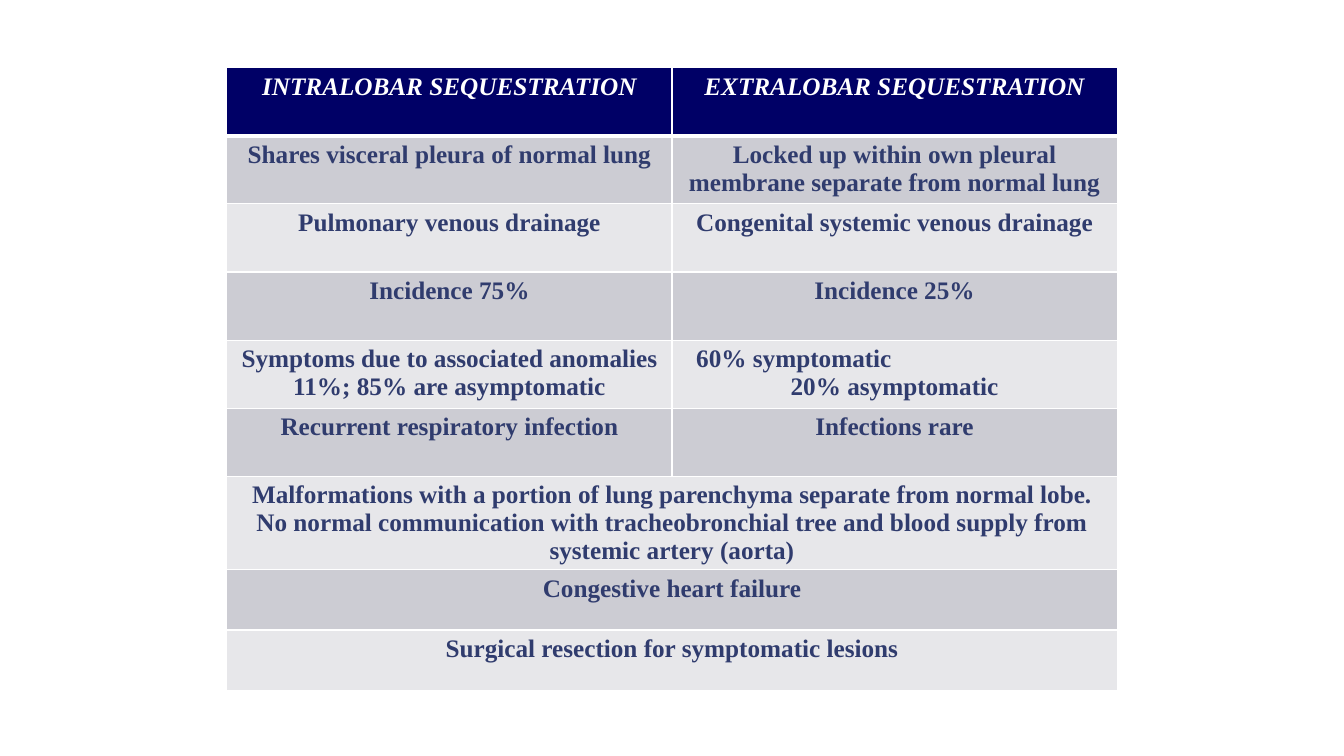
from lxml import etree
from pptx import Presentation
from pptx.dml.color import RGBColor
from pptx.enum import text
from pptx.oxml import ns
from pptx.util import Inches, Pt

COLORS = {
    "header": "000066",
    "dark_band": "CCCCD3",
    "light_band": "E7E7EA",
    "body_text": "303C6E",
    "white": "FFFFFF",
}
LEFT, WIDTH = 2.25, 8.83

# Table contents: a cell holds a list of paragraphs
comparison = [
    [["INTRALOBAR SEQUESTRATION"], ["EXTRALOBAR SEQUESTRATION"]],
    [["Shares visceral pleura of normal lung"],
     ["Locked up within own pleural membrane separate from normal lung"]],
    [["Pulmonary venous drainage"], ["Congenital systemic venous drainage"]],
    [["Incidence 75%"], ["Incidence 25%"]],
    [["Symptoms due to associated anomalies 11%; 85% are asymptomatic"],
     ["60% symptomatic", "20% asymptomatic"]],
    [["Recurrent respiratory infection"], ["Infections rare"]],
]
shared_features = [
    [[]],
    [[]],
    [["Malformations with a portion of lung parenchyma separate from normal lobe. "
      "No normal communication with tracheobronchial tree and blood supply from "
      "systemic artery (aorta)"]],
    [["Congestive heart failure"]],
    [["Surgical resection for symptomatic lesions"]],
]


def set_borders(cell, bottom_points):
    properties = cell._tc.get_or_add_tcPr()
    widths = {"lnL": 1, "lnR": 1, "lnT": 1, "lnB": bottom_points}
    for index, (side, points) in enumerate(widths.items()):
        line = etree.Element(ns.qn(f"a:{side}"), w=str(Pt(points)))
        fill = etree.SubElement(line, ns.qn("a:solidFill"))
        etree.SubElement(fill, ns.qn("a:srgbClr"), val=COLORS["white"])
        properties.insert(index, line)


def add_band_table(slide, top, row_height, rows):
    columns = len(rows[0])
    table = slide.shapes.add_table(
        len(rows), columns, Inches(LEFT), Inches(top),
        Inches(WIDTH), Inches(row_height * len(rows))).table
    for column in table.columns:
        column.width = Inches(WIDTH / columns)
    for row_index, row in enumerate(rows):
        table.rows[row_index].height = Inches(row_height)
        is_header = row_index == 0
        band = "dark_band" if row_index % 2 else "light_band"
        for column_index, lines in enumerate(row):
            cell = table.cell(row_index, column_index)
            cell.fill.solid()
            cell.fill.fore_color.rgb = RGBColor.from_string(
                COLORS["header" if is_header else band])
            set_borders(cell, 3 if is_header else 1)
            for line_index, line in enumerate(lines):
                frame = cell.text_frame
                paragraph = frame.add_paragraph() if line_index else frame.paragraphs[0]
                paragraph.alignment = text.PP_ALIGN.CENTER
                run = paragraph.add_run()
                run.text = line
                run.font.name = "Times New Roman"
                run.font.size = Pt(18)
                run.font.bold = True
                run.font.italic = is_header
                run.font.color.rgb = RGBColor.from_string(
                    COLORS["white" if is_header else "body_text"])
    return table


presentation = Presentation()
presentation.slide_width = Inches(13.33)
presentation.slide_height = Inches(7.5)
slide = presentation.slides.add_slide(presentation.slide_layouts[6])

# Features common to both types; the comparison overlaps its two top rows
add_band_table(slide, 3.52, 0.6, shared_features)

# Side-by-side comparison
comparison_table = add_band_table(slide, 0.67, 4.06 / len(comparison), comparison)

# The symptomatic share starts at the left of its cell
symptomatic = comparison_table.cell(4, 1).text_frame.paragraphs[0]
symptomatic.alignment = text.PP_ALIGN.LEFT
symptomatic._p.get_or_add_pPr().set("marL", str(Inches(0.14)))

presentation.save("out.pptx")
